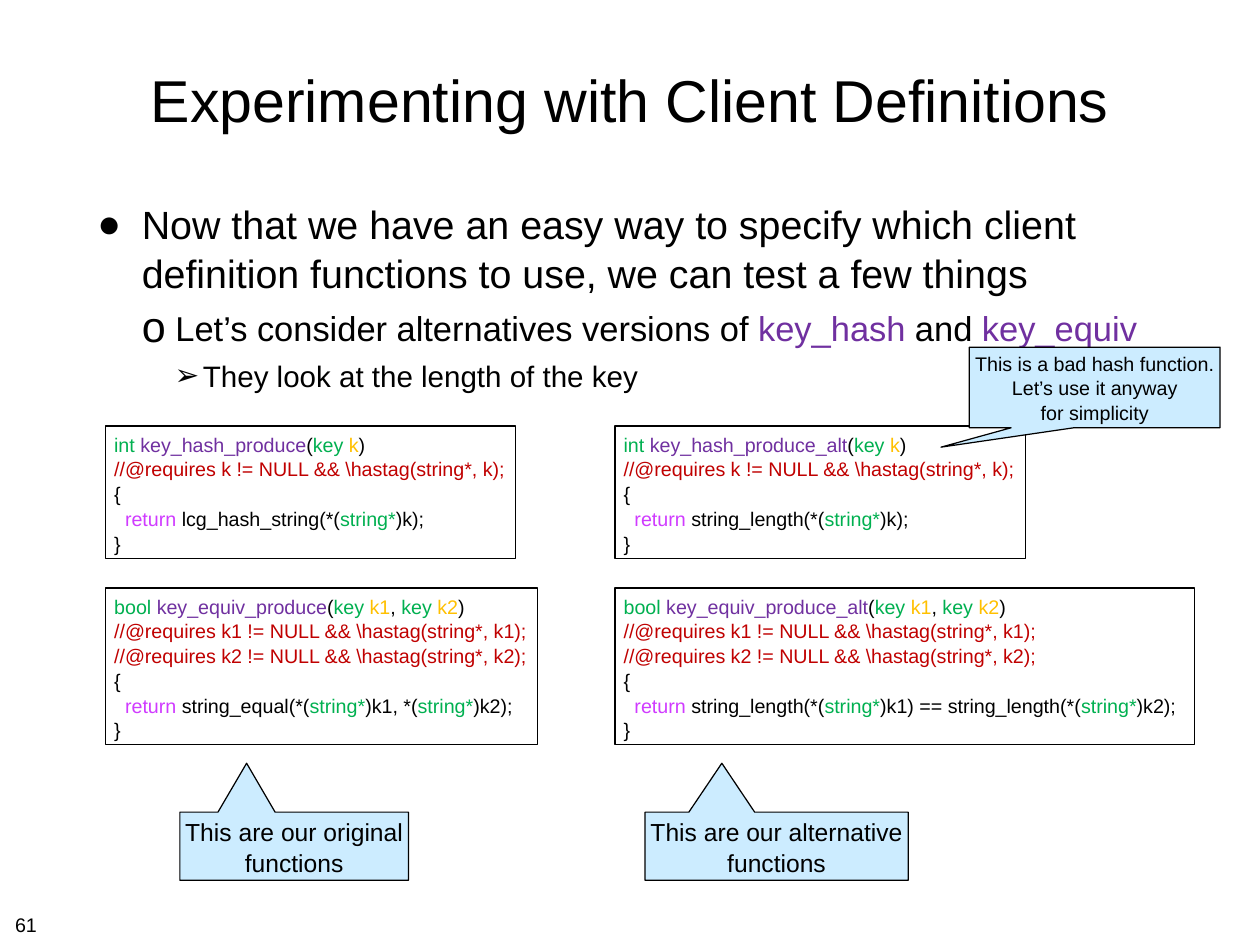
from lxml.etree import SubElement
from pptx import Presentation
from pptx.dml.color import RGBColor
from pptx.enum.shapes import MSO_SHAPE as Shape
from pptx.enum.text import MSO_ANCHOR as Anchor, MSO_AUTO_SIZE as Fit, PP_ALIGN as Align
from pptx.oxml.ns import qn
from pptx.util import Inches, Pt

FONT = "Arial"
BLACK, PALE = "000000", "CCECFF"
# Syntax colours; "~" and one of these letters starts a coloured piece of text
INK = {"b": BLACK, "g": "00B050", "p": "7030A0", "y": "FFC000",
       "r": "C00000", "m": "D03BFF"}


def paint(target, color):
    """Give a font, fill or line one solid colour."""
    fill = target if hasattr(target, "solid") else target.fill
    fill.solid()
    fill.fore_color.rgb = RGBColor.from_string(color)


def place(shape, box):
    shape.left, shape.top, shape.width, shape.height = map(Inches, box)


def set_frame(frame, side=0.06, edge=0.06, anchor=Anchor.TOP, wrap=False):
    frame.auto_size = Fit.NONE
    frame.word_wrap = wrap
    frame.vertical_anchor = anchor
    frame.margin_left = frame.margin_right = Inches(side)
    frame.margin_top = frame.margin_bottom = Inches(edge)


def write(frame, lines, size, align=Align.LEFT):
    """Write one paragraph for each line of marked text."""
    for i, line in enumerate(lines):
        para = frame.add_paragraph() if i else frame.paragraphs[0]
        para.alignment = align
        para.line_spacing = 1.05
        para.space_before = Pt(0)
        para.font.name, para.font.size = FONT, Pt(size)
        paint(para.font, BLACK)
        for piece in line.split("~")[1:]:
            run = para.add_run()
            run.text = piece[1:]
            paint(run.font, INK[piece[0]])


def add_box(slide, kind, box):
    shape = slide.shapes.add_shape(kind, *map(Inches, box))
    shape.shadow.inherit = False
    paint(shape.line, BLACK)
    shape.line.width = Pt(1)
    return shape


# Heading
def add_title(slide, box):
    title = slide.shapes.title
    place(title, box)
    set_frame(title.text_frame, anchor=Anchor.MIDDLE, wrap=True)
    write(title.text_frame, ["~bExperimenting with Client Definitions"], 48, Align.CENTER)


# Bulleted list: text, size, left margin, hanging indent, space before, mark, mark size
POINTS = [
    ("~bNow that we have an easy way to specify which client definition "
     "functions to use, we can test a few things", 32, 0.5, 0.5, 8, "●", 100),
    ("~bLet’s consider alternatives versions of ~pkey_hash~b and ~pkey_equiv",
     28, 0.88, 0.38, 7, "o", 125),
    ("~bThey look at the length of the key", 24, 1.19, 0.32, 6, "➢", 100),
]


def add_list(slide, box):
    body = slide.placeholders[1]
    place(body, box)
    frame = body.text_frame
    set_frame(frame, wrap=True)
    write(frame, [point[0] for point in POINTS], 32)
    for level, (para, point) in enumerate(zip(frame.paragraphs, POINTS)):
        size, left, hang, gap, mark, scale = point[1:]
        para.level = level
        para.font.size = Pt(size)
        para.space_before = Pt(gap)
        props = para._p.get_or_add_pPr()
        props.set("marL", str(Inches(left)))
        props.set("indent", str(-Inches(hang)))
        # Bullet parts follow the spacing but come before the default font
        parts = [SubElement(props, qn("a:buClr")),
                 SubElement(props, qn("a:buSzPct"), val=str(scale * 1000)),
                 SubElement(props, qn("a:buFont"), typeface=FONT),
                 SubElement(props, qn("a:buChar"), char=mark)]
        SubElement(parts[0], qn("a:srgbClr"), val=BLACK)
        font = props.find(qn("a:defRPr"))
        if font is not None:
            props.append(font)


# Code boxes
def hash_code(name, call):
    return [f"~gint ~p{name}~b(~gkey ~yk~b)",
            "~r//@requires k != NULL && \\hastag(string*, k);",
            "~b{", f"~m  return ~b{call}(*(~gstring*~b)k);", "~b}"]


def equiv_code(name, start, middle):
    needs = [f"~r//@requires {key} != NULL && \\hastag(string*, {key});"
             for key in ("k1", "k2")]
    return [f"~gbool ~p{name}~b(~gkey ~yk1~b, ~gkey ~yk2~b)", *needs, "~b{",
            f"~m  return ~b{start}(*(~gstring*~b)k1{middle}(~gstring*~b)k2);", "~b}"]


def add_code(slide, box, lines):
    shape = add_box(slide, Shape.RECTANGLE, box)
    shape.fill.background()
    set_frame(shape.text_frame, side=0.1)
    write(shape.text_frame, lines, 16)


# Callouts
def add_note(slide, box, lines, size, tip):
    shape = add_box(slide, Shape.RECTANGULAR_CALLOUT, box)
    paint(shape.fill, PALE)
    shape.adjustments[0], shape.adjustments[1] = tip
    set_frame(shape.text_frame, 0.05, 0.05, Anchor.MIDDLE)
    write(shape.text_frame, ["~b" + line for line in lines], size, Align.CENTER)


# One column: both functions and the callout under them
def add_column(slide, left, widths, codes, note, note_at, note_width):
    rows = [(4.81, 1.5), (6.64, 1.77)]
    for (top, height), width, code in zip(rows, widths, codes):
        add_code(slide, (left, top, width, height), code)
    add_note(slide, (left + note_at, 9.17, note_width, 0.77),
             [note, "functions"], 20, (-0.208, -1.217))


def add_number(slide, box):
    label = slide.shapes.add_textbox(*map(Inches, box))
    set_frame(label.text_frame)
    write(label.text_frame, ["~b61"], 16)


def main():
    deck = Presentation()
    deck.slide_width, deck.slide_height = Inches(14.22), Inches(10.67)
    slide = deck.slides.add_slide(deck.slide_layouts[1])
    paint(slide.background.fill, "FFFFFF")
    add_title(slide, (1.04, 0.28, 12.14, 1.64))
    add_list(slide, (1.04, 2.17, 12.14, 7.54))
    add_column(slide, 1.19, (4.63, 4.88),
               (hash_code("key_hash_produce", "lcg_hash_string"),
                equiv_code("key_equiv_produce", "string_equal", ", *")),
               "This are our original", 0.84, 2.58)
    add_column(slide, 6.94, (4.63, 6.54),
               (hash_code("key_hash_produce_alt", "string_length"),
                equiv_code("key_equiv_produce_alt", "string_length",
                           ") == string_length(*")),
               "This are our alternative", 0.34, 2.97)
    add_note(slide, (10.94, 3.92, 2.83, 0.91),
             ["This is a bad hash function.", "Let’s use it anyway", "for simplicity"],
             16, (-0.613, 0.741))
    add_number(slide, (0.11, 10.23, 0.37, 0.35))
    deck.save("out.pptx")


if __name__ == "__main__":
    main()
